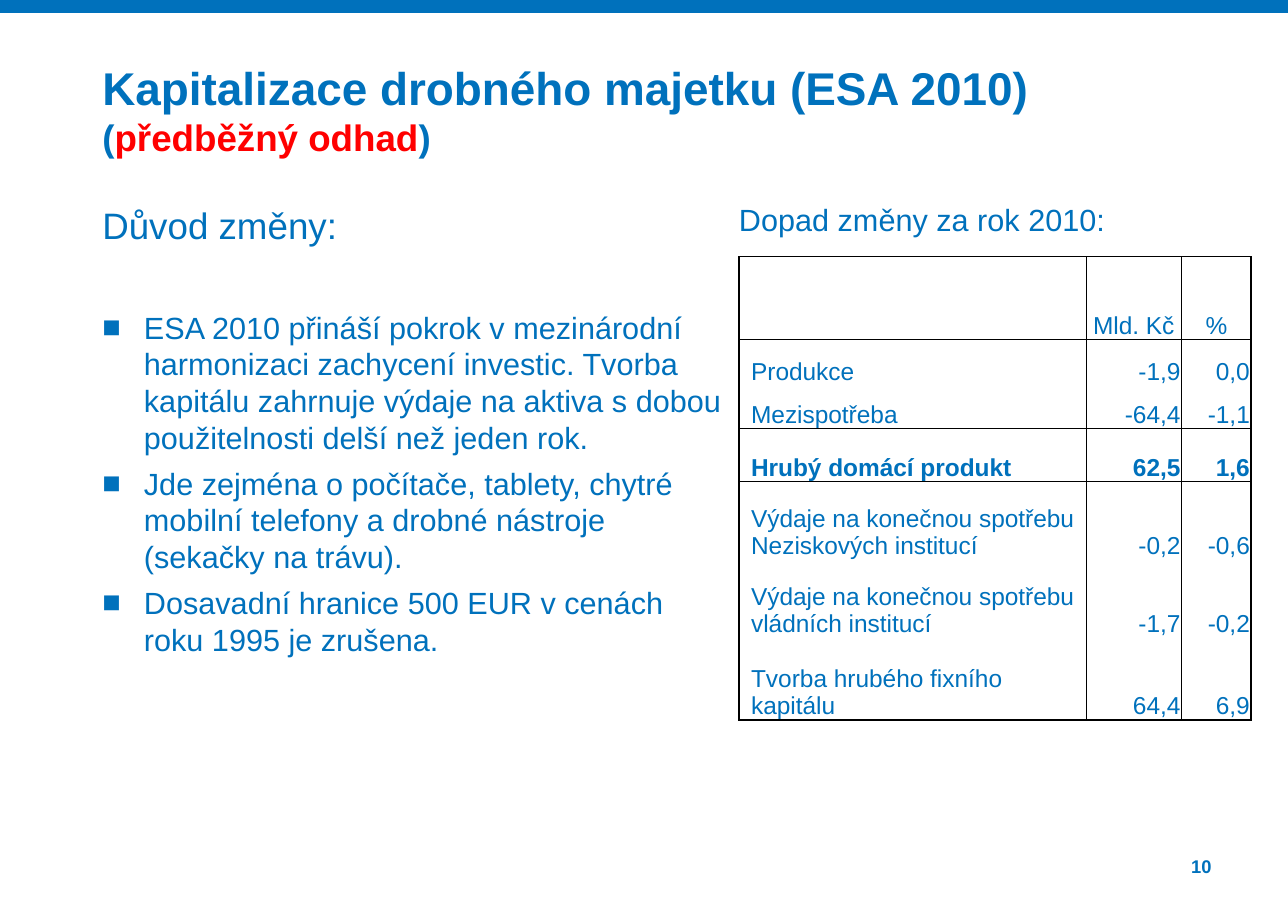
from dataclasses import dataclass
from lxml.etree import SubElement as Sub
from pptx import Presentation
from pptx.dml.color import RGBColor
from pptx.enum.shapes import MSO_SHAPE as Kind
from pptx.enum.text import MSO_ANCHOR as Anchor, MSO_AUTO_SIZE as Auto, PP_ALIGN as Align
from pptx.oxml.ns import qn
from pptx.util import Cm, Pt

BLUE, RED, BLACK = "0071BC", "FF0000", "000000"
FONT = "Arial"
LEFT, RIGHT = 2.36, 17.04


@dataclass
class Box:
    left: float
    top: float
    width: float
    height: float

    def lengths(self) -> tuple:
        return Cm(self.left), Cm(self.top), Cm(self.width), Cm(self.height)


@dataclass
class Row:
    height: float
    texts: tuple
    bold: bool = False
    end: bool = False


ROWS = [
    Row(1.9, ("", "Mld. Kč", "%"), end=True),
    Row(1.07, ("Produkce", "-1,9", "0,0")),
    Row(0.99, ("Mezispotřeba", "-64,4", "-1,1"), end=True),
    Row(1.22, ("Hrubý domácí produkt", "62,5", "1,6"), bold=True, end=True),
    Row(1.8, ("Výdaje na konečnou spotřebu Neziskových institucí", "-0,2", "-0,6")),
    Row(1.8, ("Výdaje na konečnou spotřebu vládních institucí", "-1,7", "-0,2")),
    Row(1.9, ("Tvorba hrubého fixního kapitálu", "64,4", "6,9"), end=True),
]
WIDTHS = [8.0, 2.21, 1.6]
POINTS = [
    "ESA 2010 přináší pokrok v mezinárodní harmonizaci zachycení investic. "
    "Tvorba kapitálu zahrnuje výdaje na aktiva s dobou použitelnosti delší než jeden rok.",
    "Jde zejména o počítače, tablety, chytré mobilní telefony a drobné nástroje "
    "(sekačky na trávu).",
    "Dosavadní hranice 500 EUR v cenách roku 1995 je zrušena.",
]


def paint(hue: str) -> RGBColor:
    return RGBColor.from_string(hue)


def add_run(para, text: str, size: float, hue: str = BLUE, bold: bool = False) -> None:
    run = para.add_run()
    run.text = text
    font = run.font
    font.name, font.size, font.bold = FONT, Pt(size), bold
    font.color.rgb = paint(hue)


def set_frame(frame, pad: float = 0):
    frame.word_wrap = True
    frame.auto_size = Auto.NONE
    frame.vertical_anchor = Anchor.TOP
    frame.margin_left = frame.margin_right = 0
    frame.margin_top = frame.margin_bottom = Cm(pad)
    return frame


def add_text(slide, box: Box, pad: float = 0):
    return set_frame(slide.shapes.add_textbox(*box.lengths()).text_frame, pad)


def indent(para, left: float, first: float = 0):
    props = para._p.get_or_add_pPr()
    props.set("marL", str(Cm(left)))
    props.set("indent", str(Cm(first)))
    return props


def add_title(slide) -> None:
    title = slide.shapes.title
    title.left, title.top, title.width, title.height = Box(LEFT, 1.37, 25.6, 2.7).lengths()
    frame = set_frame(title.text_frame)
    head, note = frame.paragraphs[0], frame.add_paragraph()
    for para in (head, note):
        para.alignment = Align.LEFT
        para.space_before = Pt(0)
    add_run(head, "Kapitalizace drobného majetku (ESA 2010)", 30, bold=True)
    for text, hue in (("(", BLUE), ("předběžný odhad", RED), (")", BLUE)):
        add_run(note, text, 24, hue, True)


def add_body(slide) -> None:
    frame = add_text(slide, Box(LEFT, 4.5, 14.3, 13.2))
    head = frame.paragraphs[0]
    head.line_spacing = Pt(34)
    add_run(head, "Důvod změny:", 24)
    for place, text in enumerate(POINTS):
        para = frame.add_paragraph()
        props = indent(para, 0.96, -0.96)
        Sub(props, qn("a:buFont"), typeface=FONT)
        Sub(props, qn("a:buChar"), char="■")
        para.line_spacing = Pt(24)
        para.space_before = Pt(6 if place else 40)
        add_run(para, text, 20)


def add_edge(props, side: str, width: float) -> None:
    line = Sub(props, qn("a:ln" + side), w=str(Pt(width)))
    if width:
        fill = Sub(line, qn("a:solidFill"))
        Sub(fill, qn("a:srgbClr"), val=BLACK)
    else:
        Sub(line, qn("a:noFill"))


def fill_cell(cell, row: int, col: int) -> None:
    data = ROWS[row]
    last = len(ROWS) - 1
    edges = {
        "L": 0.5 if col else 1,
        "R": 1 if col == len(WIDTHS) - 1 else 0.5,
        "T": (0.5 if ROWS[row - 1].end else 0) if row else 1,
        "B": (0.5 if data.end else 0) if row < last else 1,
    }
    cell.margin_left = cell.margin_right = cell.margin_top = Cm(0.03)
    cell.margin_bottom = 0
    cell.vertical_anchor = Anchor.BOTTOM
    for side, width in edges.items():
        add_edge(cell._tc.get_or_add_tcPr(), side, width)
    cell.fill.background()
    para = cell.text_frame.paragraphs[0]
    if col:
        para.alignment = Align.RIGHT if row else Align.CENTER
    else:
        indent(para, 0.25)
    if data.texts[col]:
        add_run(para, data.texts[col], 16, bold=data.bold)


def add_grid(slide) -> None:
    box = Box(RIGHT, 5.92, sum(WIDTHS), sum(row.height for row in ROWS))
    grid = slide.shapes.add_table(len(ROWS), len(WIDTHS), *box.lengths()).table
    grid.first_row = grid.horz_banding = False
    for col, width in enumerate(WIDTHS):
        grid.columns[col].width = Cm(width)
    for row, data in enumerate(ROWS):
        grid.rows[row].height = Cm(data.height)
        for col in range(len(WIDTHS)):
            fill_cell(grid.cell(row, col), row, col)


def main() -> None:
    deck = Presentation()
    deck.slide_width, deck.slide_height = Cm(29.7), Cm(21)
    slide = deck.slides.add_slide(deck.slide_layouts[5])

    band = slide.shapes.add_shape(Kind.RECTANGLE, *Box(0, 0, 29.7, 0.3).lengths())
    band.shadow.inherit = False
    band.fill.solid()
    band.fill.fore_color.rgb = paint(BLUE)
    band.line.fill.background()

    add_title(slide)
    add_body(slide)
    label = add_text(slide, Box(RIGHT, 4.5, 10.6, 1.4), 0.13).paragraphs[0]
    add_run(label, "Dopad změny za rok 2010:", 20)
    add_grid(slide)

    page = add_text(slide, Box(25.96, 19.71, 1.98, 0.53)).paragraphs[0]
    page.alignment = Align.RIGHT
    add_run(page, "10", 12, bold=True)
    deck.save("out.pptx")


if __name__ == "__main__":
    main()
